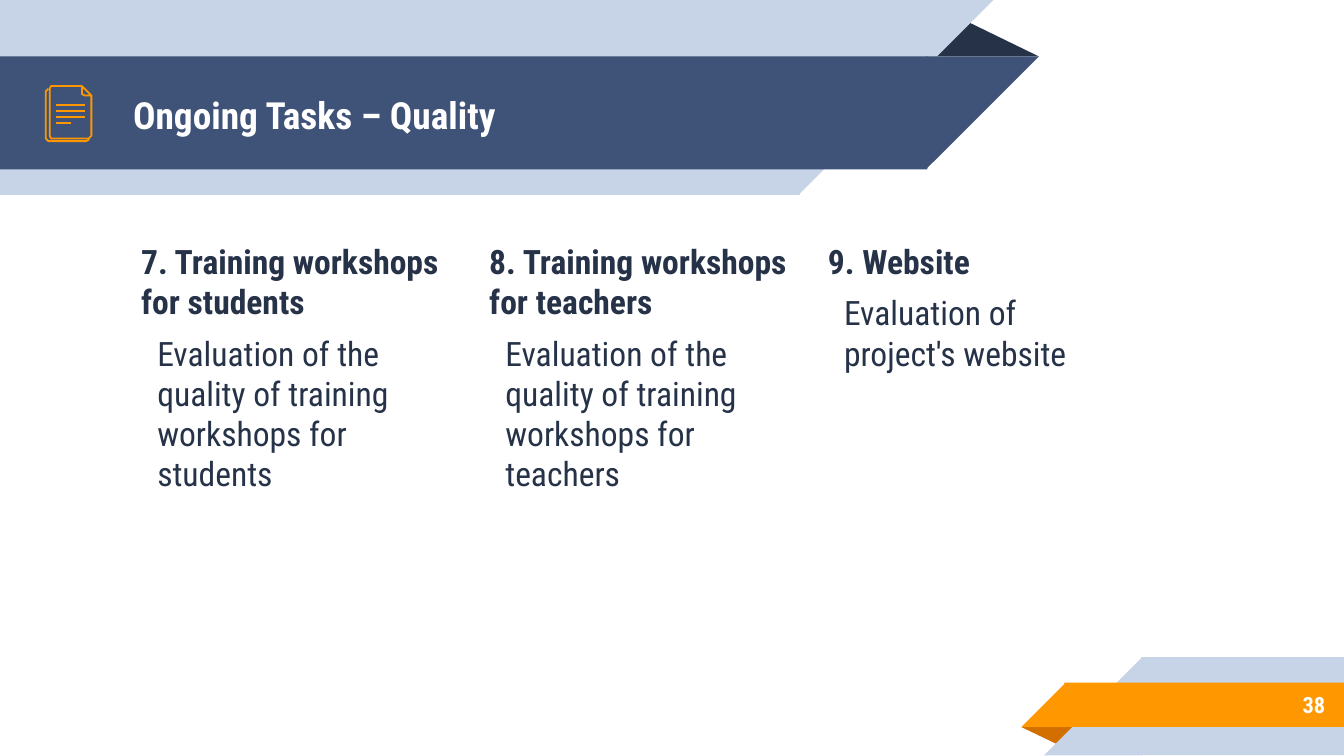
from lxml import etree
from pptx import Presentation
from pptx.dml.color import RGBColor
from pptx.enum.shapes import MSO_CONNECTOR, MSO_SHAPE
from pptx.enum.text import MSO_ANCHOR, MSO_AUTO_SIZE, PP_ALIGN
from pptx.oxml.ns import qn
from pptx.util import Inches, Pt

RECTANGLE = MSO_SHAPE.RECTANGLE
TRIANGLE = MSO_SHAPE.ISOSCELES_TRIANGLE
RIGHT_TRIANGLE = MSO_SHAPE.RIGHT_TRIANGLE
STRAIGHT = MSO_CONNECTOR.STRAIGHT
TOP, MIDDLE = MSO_ANCHOR.TOP, MSO_ANCHOR.MIDDLE
LEFT, RIGHT = PP_ALIGN.LEFT, PP_ALIGN.RIGHT
NO_AUTOFIT = MSO_AUTO_SIZE.NONE

FONT = "Roboto Condensed"
NAVY, BLUE, PALE = "263248", "3F5378", "C7D3E6"
ORANGE, RUST, WHITE = "FF9800", "D26F00", "FFFFFF"
OVERLAP = 0.01

COLUMNS = [
    (0.95, "7. Training workshops for students",
     "Evaluation of the quality of training workshops for students"),
    (3.54, "8. Training workshops for teachers",
     "Evaluation of the quality of training workshops for teachers"),
    (6.06, "9. Website", "Evaluation of project's website"),
]


def color(hex_code):
    return RGBColor.from_string(hex_code)


def add_filled(shapes, kind, box, fill, rotation=0):
    shape = shapes.add_shape(kind, *map(Inches, box))
    shape.shadow.inherit = False
    shape.fill.solid()
    shape.fill.fore_color.rgb = color(fill)
    shape.line.fill.background()
    shape.rotation = rotation
    return shape


def add_fold(shapes, box, fill, rotation=0):
    fold = add_filled(shapes, TRIANGLE, box, fill, rotation)
    fold.adjustments[0] = 0.324


def add_band(shapes, box, fill, points_right):
    left, top, width, height = box
    body_left = left if points_right else left + height - OVERLAP
    tip_left = left + width - height if points_right else left
    add_filled(shapes, RECTANGLE,
               (body_left, top, width - height + OVERLAP, height), fill)
    tip = add_filled(shapes, RIGHT_TRIANGLE, (tip_left, top, height, height),
                     fill, 180 if points_right else 0)
    tip._element.spPr.find(qn("a:xfrm")).set("flipH", "1")


def add_header_ribbon(slide):
    shapes = slide.shapes.add_group_shape().shapes
    add_fold(shapes, (6.88, 0.14, 0.85, 0.28), NAVY)
    add_band(shapes, (0, 0, 7.39, 1.45), PALE, True)
    add_band(shapes, (0, 0.42, 7.73, 0.84), BLUE, True)


def add_footer_ribbon(slide):
    shapes = slide.shapes.add_group_shape().shapes
    add_fold(shapes, (7.6, 5.41, 0.43, 0.14), RUST, 180)
    add_band(shapes, (7.77, 4.89, 2.23, 0.73), PALE, False)
    add_band(shapes, (7.6, 5.08, 2.4, 0.33), ORANGE, False)


def place_text(shape, box, texts, anchor=TOP):
    shape.left, shape.top, shape.width, shape.height = map(Inches, box)
    frame = shape.text_frame
    frame.text = "\n".join(texts)
    frame.word_wrap = True
    frame.auto_size = NO_AUTOFIT
    frame.vertical_anchor = anchor
    frame.margin_left = frame.margin_right = Inches(0.1)
    frame.margin_top = frame.margin_bottom = Inches(0.1)
    return frame.paragraphs


def format_paragraph(paragraph, size, hex_code, bold=True, align=LEFT,
                     before=0, indent=0):
    paragraph.alignment = align
    paragraph.space_before = Pt(before)
    paragraph.line_spacing = 1.0
    properties = paragraph._p.get_or_add_pPr()
    properties.set("marL", str(Inches(indent)))
    properties.set("indent", "0")
    etree.SubElement(properties, qn("a:buNone"))
    for run in paragraph.runs:
        run.font.name = FONT
        run.font.size = Pt(size)
        run.font.bold = bold
        run.font.color.rgb = color(hex_code)


def add_title(title, box, text):
    paragraph, = place_text(title, box, [text], MIDDLE)
    format_paragraph(paragraph, 20, WHITE)


def add_column(body, box, heading, detail):
    first, second = place_text(body, box, [heading, detail])
    format_paragraph(first, 18, NAVY, before=6)
    format_paragraph(second, 18, NAVY, bold=False, before=6, indent=0.12)


def add_page_number(slide, box, number):
    text_box = slide.shapes.add_textbox(*map(Inches, box))
    paragraph, = place_text(text_box, box, [number], MIDDLE)
    format_paragraph(paragraph, 12, WHITE, align=RIGHT)


def style_outline(shape):
    shape.line.color.rgb = color(ORANGE)
    shape.line.width = Pt(0.96)


def add_document_icon(slide, left, top):
    shapes = slide.shapes.add_group_shape().shapes
    back_page = [(0.32, 0.39), (0.32, 0.4), (0.3, 0.41), (0.02, 0.41),
                 (0, 0.39), (0, 0.04), (0.02, 0.02)]
    front_page = [(0.34, 0.07), (0.34, 0.37), (0.32, 0.39), (0.04, 0.39),
                  (0.03, 0.37), (0.03, 0.02), (0.04, 0), (0.27, 0)]
    corner = [(0.27, 0.06), (0.27, 0), (0.34, 0.07), (0.29, 0.07)]
    for points, closed in ((back_page, False), (front_page, False), (corner, True)):
        start, *rest = [((left + x) * 100, (top + y) * 100) for x, y in points]
        builder = shapes.build_freeform(*start, scale=Inches(0.01))
        builder.add_line_segments(rest, close=closed)
        outline = builder.convert_to_shape()
        outline.shadow.inherit = False
        outline.fill.background()
        style_outline(outline)
    for row, width in enumerate((0.21, 0.21, 0.21, 0.11)):
        y = top + 0.14 + row * 0.045
        line = shapes.add_connector(STRAIGHT, Inches(left + 0.08), Inches(y),
                                    Inches(left + 0.08 + width), Inches(y))
        style_outline(line)
        etree.SubElement(line._element.spPr, qn("a:effectLst"))


def main():
    presentation = Presentation()
    presentation.slide_width = Inches(10)
    presentation.slide_height = Inches(10) * 9 // 16
    slide = presentation.slides.add_slide(presentation.slide_layouts[4])
    title, *bodies = slide.placeholders
    spare = bodies.pop()
    spare._element.getparent().remove(spare._element)

    add_header_ribbon(slide)
    add_footer_ribbon(slide)
    for placeholder in (title, *bodies):
        slide.shapes._spTree.append(placeholder._element)
    add_title(title, (0.89, 0.43, 5.75, 0.84), "Ongoing Tasks – Quality")
    for body, (left, heading, detail) in zip(bodies, COLUMNS):
        add_column(body, (left, 1.69, 2.46, 2.96), heading, detail)
    add_page_number(slide, (8.33, 5.07, 1.63, 0.35), "38")
    add_document_icon(slide, 0.34, 0.64)
    presentation.save("out.pptx")


if __name__ == "__main__":
    main()
